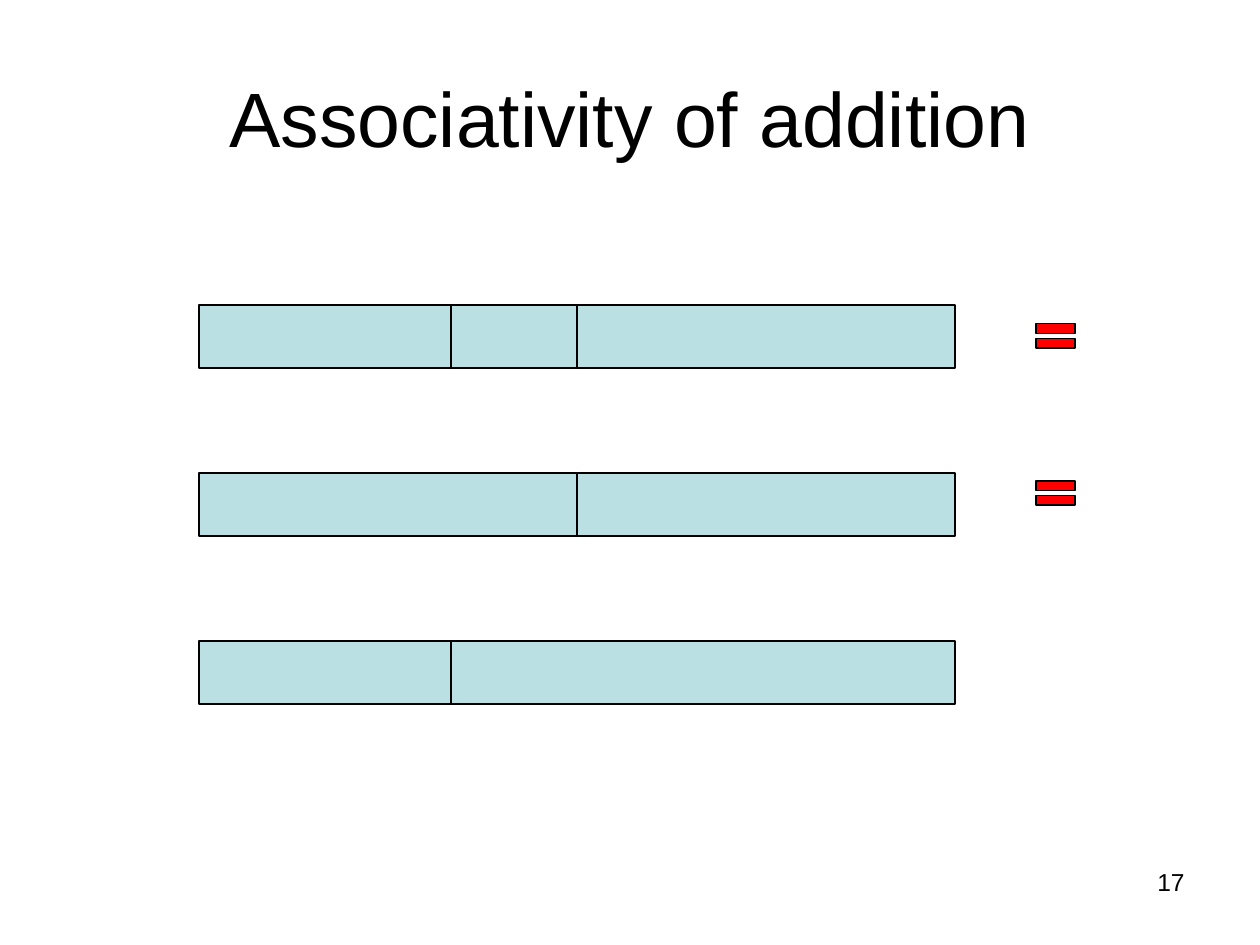
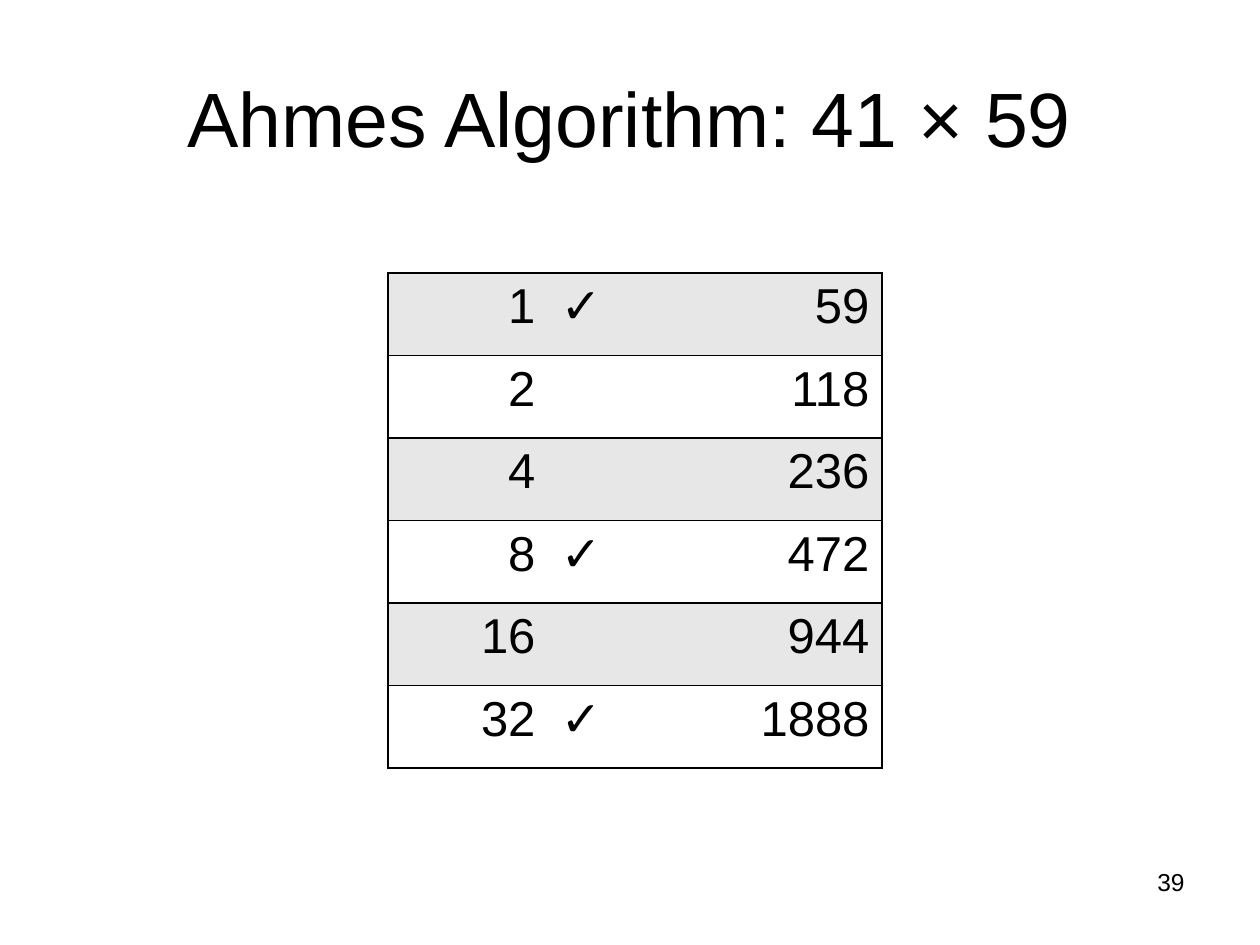
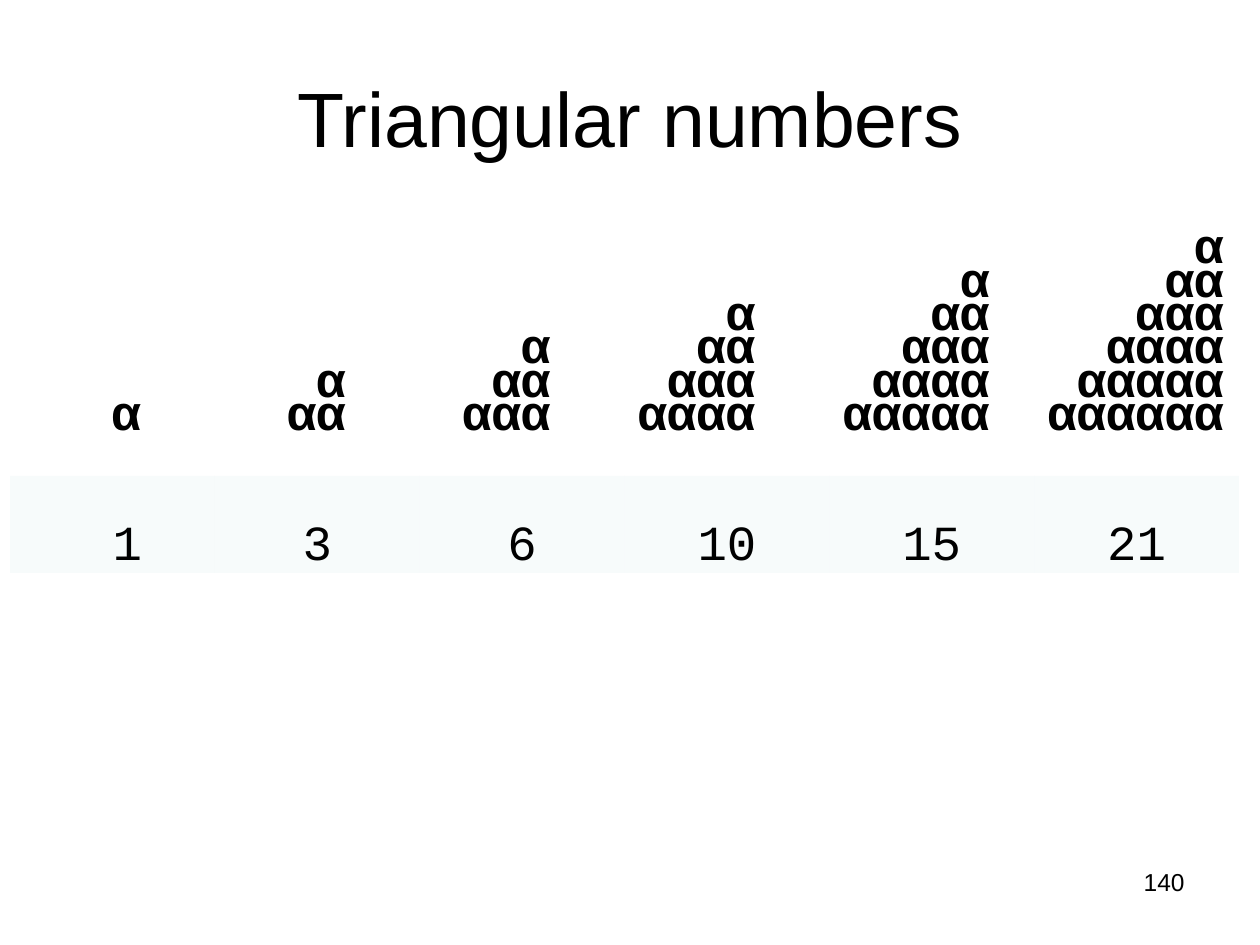
from lxml.etree import SubElement
from pptx import Presentation
from pptx.dml.color import RGBColor
from pptx.enum.shapes import MSO_SHAPE as Shape
from pptx.enum.text import MSO_ANCHOR as Anchor, PP_ALIGN as Align
from pptx.oxml.ns import qn
from pptx.util import Pt

EMU_PER_PX = 914400 / 126
COLORS = {
    "ink": "000000", "paper": "FFFFFF", "segment": "BBE0E3",
    "equals": "FF0000", "stripe": "E7E7E7", "band": "DAEDEF",
}
SANS, MONO = "Arial", "Courier New"
NO_TABLE_STYLE = "{2D5ABB26-0587-4C30-8999-92F81FD0307C}"
CELL_INSET = 13  # side margin of a table cell
GLYPH = 29.4     # advance of one monospaced glyph at 28 pt


def px(length):
    return round(length * EMU_PER_PX)


def box(*lengths):
    return [px(length) for length in lengths]


def color(name):
    return RGBColor.from_string(COLORS[name])


def style_text(frame, size, font=SANS, align=Align.LEFT, bold=False, spacing=None):
    for paragraph in frame.paragraphs:
        paragraph.alignment = align
        if spacing:
            paragraph.line_spacing = spacing
        for run in paragraph.runs:
            run.font.size, run.font.name, run.font.bold = Pt(size), font, bold
            run.font.color.rgb = color("ink")


# Shared parts: white page, title, page number
def add_page(deck, heading, number):
    slide = deck.slides.add_slide(deck.slide_layouts[5])
    slide.background.fill.solid()
    slide.background.fill.fore_color.rgb = color("paper")

    title = slide.shapes.title
    title.left, title.top, title.width, title.height = box(63, 38, 1134, 157)
    title.text_frame.text = heading
    title.text_frame.vertical_anchor = Anchor.MIDDLE
    style_text(title.text_frame, 44, align=Align.CENTER)

    page_number = slide.shapes.add_textbox(*box(903, 861, 294, 66)).text_frame
    page_number.word_wrap = True
    page_number.text = str(number)
    style_text(page_number, 14, align=Align.RIGHT)
    return slide


# Shapes
def add_outlined(shapes, kind, place, fill, weight=1):
    shape = shapes.add_shape(kind, *box(*place))
    shape.shadow.inherit = False
    shape.fill.solid()
    shape.fill.fore_color.rgb = color(fill)
    shape.line.color.rgb = color("ink")
    shape.line.width = Pt(weight)


def add_bar(slide, left, top, units):
    """Draw a row of touching segments, one inch (126 px) per unit."""
    bar = slide.shapes.add_group_shape()
    for unit in units:
        width = unit * 126
        add_outlined(bar.shapes, Shape.RECTANGLE, (left, top, width, 63),
                     "segment", 0.75)
        left += width


# Tables
def add_plain_table(slide, rows, columns, place):
    table = slide.shapes.add_table(rows, columns, *box(*place)).table
    table.first_row = table.horz_banding = False
    table._tbl.tblPr.find(qn("a:tableStyleId")).text = NO_TABLE_STYLE
    return table


def fill_cell(cell, name, opacity=None):
    cell.fill.solid()
    cell.fill.fore_color.rgb = color(name)
    if opacity:
        tone = cell._tc.tcPr.find(".//" + qn("a:srgbClr"))
        SubElement(tone, qn("a:alpha"), val=str(opacity * 1000))


def set_borders(cell, sides):
    """Draw the named sides (L, R, T, B) and clear the others."""
    properties = cell._tc.get_or_add_tcPr()
    for position, side in enumerate("LRTB"):
        line = SubElement(properties, qn("a:ln" + side), w=str(Pt(1)))
        if side in sides:
            ink = SubElement(line, qn("a:solidFill"))
            SubElement(ink, qn("a:srgbClr"), val=COLORS["ink"])
        else:
            SubElement(line, qn("a:noFill"))
        properties.insert(position, line)


def add_doubling_table(slide, multiplicand, multiplier, steps):
    table = add_plain_table(slide, steps, 3, (388, 273, 494, 495))
    for column, width in zip(table.columns, (160, 160, 174)):
        column.width = px(width)
    for step in range(steps):
        power = 2 ** step
        tick = "✓" if multiplier & power else ""
        values = (str(power), tick, str(power * multiplicand))
        for column, (value, outer) in enumerate(zip(values, ("L", "", "R"))):
            cell = table.cell(step, column)
            cell.text_frame.text = value
            style_text(cell.text_frame, 28,
                       align=Align.LEFT if column == 1 else Align.RIGHT)
            fill_cell(cell, "paper" if step % 2 else "stripe")
            set_borders(cell, "TB" + outer)


def add_triangle_table(slide, count):
    cell_width = 1229 / count
    table = add_plain_table(slide, 2, count, (10, 225, 1229, 348))
    table.rows[0].height, table.rows[1].height = px(251), px(97)
    for column in range(count):
        order = column + 1

        # Triangle, flush with a right edge at least four glyphs in
        triangle = table.cell(0, column)
        triangle.text_frame.text = "\n".join("α" * n for n in range(1, order + 1))
        style_text(triangle.text_frame, 28, MONO, Align.RIGHT, True, 0.6)
        triangle.margin_left = px(CELL_INSET)
        triangle.margin_right = px(cell_width - CELL_INSET - GLYPH * max(4, order))
        triangle.margin_top, triangle.margin_bottom = 0, px(39)
        triangle.fill.background()

        # Its number of glyphs
        total = table.cell(1, column)
        total.text_frame.text = str(order * (order + 1) // 2)
        style_text(total.text_frame, 28, MONO, Align.CENTER, spacing=0.6)
        fill_cell(total, "band", 20)
        if column == 0:
            total.margin_left = px(CELL_INSET + GLYPH)

        for cell in (triangle, total):
            cell.vertical_anchor = Anchor.BOTTOM
            set_borders(cell, "")


def main():
    deck = Presentation()
    deck.slide_width, deck.slide_height = box(1260, 945)

    addition = add_page(deck, "Associativity of addition", 17)
    for row, units in enumerate([(2, 1, 3), (3, 3), (2, 4)]):
        add_bar(addition, 199, 305 + row * 168, units)
    for top in (315, 472):
        add_outlined(addition.shapes, Shape.MATH_EQUAL, (1029, top, 53, 42), "equals")

    ahmes = add_page(deck, "Ahmes Algorithm: 41 × 59", 39)
    add_doubling_table(ahmes, multiplicand=59, multiplier=41, steps=6)

    triangular = add_page(deck, "Triangular numbers", 140)
    add_triangle_table(triangular, 6)

    deck.save("out.pptx")


if __name__ == "__main__":
    main()
